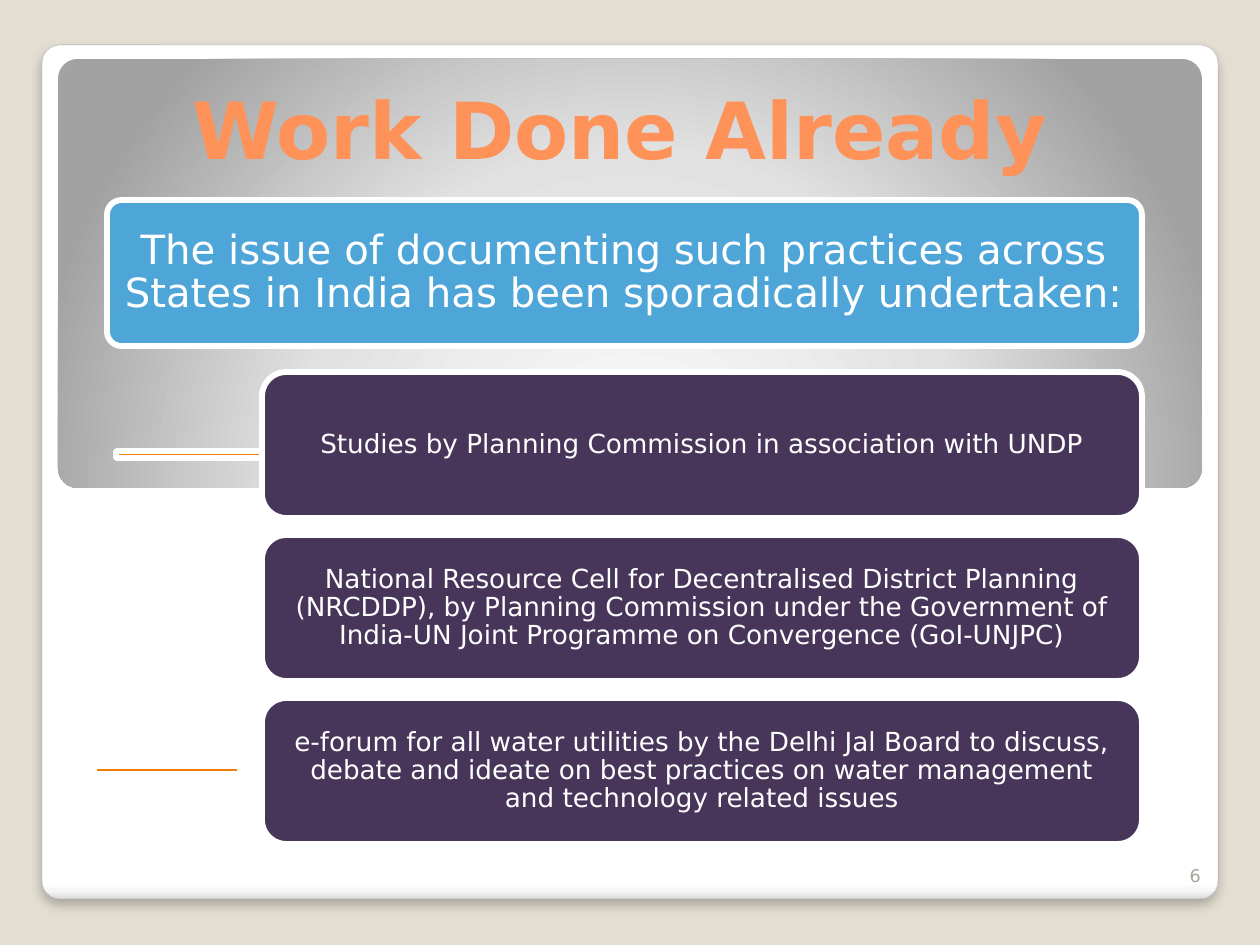
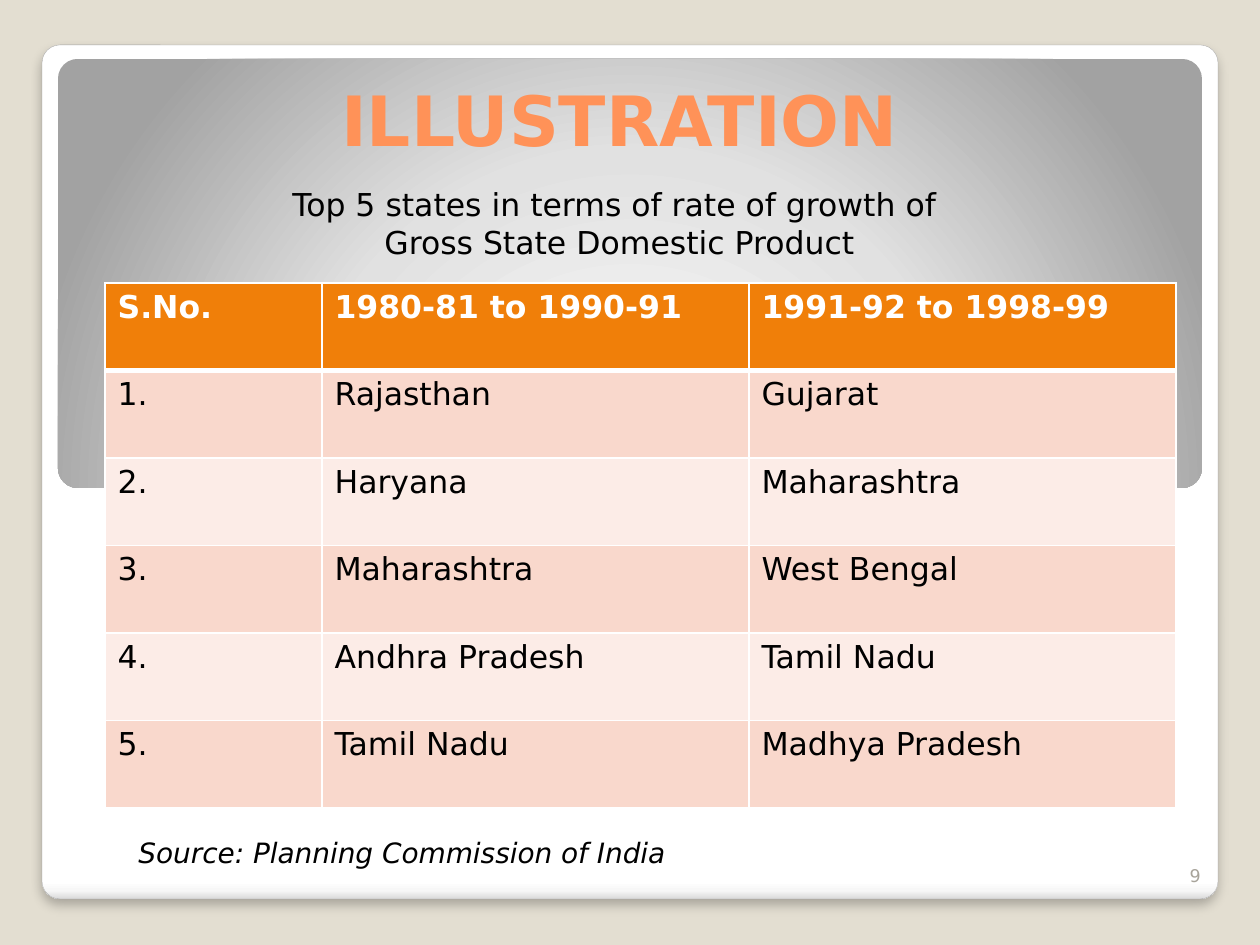
from pptx import Presentation
from pptx.dml.color import RGBColor
from pptx.enum.shapes import MSO_SHAPE as Shape
from pptx.enum.text import MSO_ANCHOR as Anchor, PP_ALIGN as Align
from pptx.oxml import parse_xml
from pptx.oxml.ns import nsdecls, qn
from pptx.util import Emu, Pt

FONT = "DejaVu Sans"
SAND, WHITE, BLACK, NUMBER_GREY = "E3DED1", "FFFFFF", "000000", "A8A49B"
CORAL, ORANGE, BLUE, PURPLE = "FF9258", "F07F09", "4EA5D8", "48365A"
BAND_COLORS = ("F9D8CC", "FCECE7")
CARD_STOPS = [(0, "FFFFFF"), (98, "FFFFFF"), (99, "F7F7F7"), (100, "DADADA")]
PANEL_STOPS = [(0, "FFFFFF"), (55, "E1E1E1"), (100, "A2A2A2")]
LINEAR = '<a:lin ang="5400000" scaled="0"/>'
RADIAL = ('<a:path path="circle"><a:fillToRect l="50000" t="175000" '
          'r="50000" b="-75000"/></a:path>')

WORK_HEADING = ("The issue of documenting such practices across States in India "
                "has been sporadically undertaken:")
WORK_ITEMS = [
    ("Studies by Planning Commission in association with UNDP", (116, 451, 146, 7)),
    ("National Resource Cell for Decentralised District Planning (NRCDDP), by "
     "Planning Commission under the Government of India-UN Joint Programme on "
     "Convergence (GoI-UNJPC)", (107, 604, 146, 6)),
    ("e-forum for all water utilities by the Delhi Jal Board to discuss, debate "
     "and ideate on best practices on water management and technology related "
     "issues", (94, 766, 146, 8)),
]
ITEM_LEFT, ITEM_TOP, ITEM_WIDTH, ITEM_HEIGHT, ITEM_STEP = 262, 372, 880, 146, 163

GROWTH_CAPTION = "Top 5 states in terms of rate of growth of \nGross State Domestic Product"
GROWTH_SOURCE = "Source: Planning Commission of India"
GROWTH_ROWS = [
    ("S.No.", "1980-81 to 1990-91", "1991-92 to 1998-99"),
    ("1.", "Rajasthan", "Gujarat"),
    ("2.", "Haryana", "Maharashtra"),
    ("3.", "Maharashtra", "West Bengal"),
    ("4.", "Andhra Pradesh", "Tamil Nadu"),
    ("5.", "Tamil Nadu", "Madhya Pradesh"),
]
COLUMN_WIDTHS = (217, 427, 427)


def px(length):
    return Emu(round(length * 914400 / 126))


def color(value):
    return RGBColor.from_string(value)


def write(frame, text, size=18, fill=BLACK, bold=False, italic=False,
          align=Align.LEFT, spacing=None):
    for index, line in enumerate(text.split("\n")):
        para = frame.add_paragraph() if index else frame.paragraphs[0]
        para.alignment = align
        para.line_spacing = spacing
        span = para.add_run()
        span.text = line
        span.font.name = FONT
        span.font.size = Pt(size)
        span.font.bold = bold
        span.font.italic = italic
        span.font.color.rgb = color(fill)


def set_frame(frame, anchor, inset=None):
    frame.word_wrap = True
    frame.vertical_anchor = anchor
    if inset is not None:
        frame.margin_left = frame.margin_right = px(inset)
        frame.margin_top = frame.margin_bottom = px(inset)


def add_text(page, area, text, anchor=Anchor.TOP, inset=None, **style):
    box = page.shapes.add_textbox(*map(px, area))
    set_frame(box.text_frame, anchor, inset)
    write(box.text_frame, text, **style)


def add_rounded(page, area, corner, fill, line=None, line_width=3.35):
    shape = page.shapes.add_shape(Shape.ROUNDED_RECTANGLE, *map(px, area))
    shape.adjustments[0] = corner
    shape.shadow.inherit = False
    shape.fill.solid()
    shape.fill.fore_color.rgb = color(fill)
    if line:
        shape.line.color.rgb = color(line)
        shape.line.width = Pt(line_width)
    else:
        shape.line.fill.background()
    return shape


def set_gradient(shape, stops, direction):
    marks = "".join(f'<a:gs pos="{place * 1000}"><a:srgbClr val="{value}"/></a:gs>'
                    for place, value in stops)
    gradient = parse_xml(f'<a:gradFill {nsdecls("a")} rotWithShape="1">'
                         f'<a:gsLst>{marks}</a:gsLst>{direction}</a:gradFill>')
    properties = shape._element.spPr
    properties.replace(properties.find(qn("a:solidFill")), gradient)


def add_shadow(shape):
    effects = shape._element.spPr.find(qn("a:effectLst"))
    effects.append(parse_xml(
        f'<a:outerShdw {nsdecls("a")} blurRad="{Pt(6)}" dist="{Pt(4)}" dir="5400000" '
        'algn="tl" rotWithShape="0"><a:srgbClr val="000000"><a:alpha val="25000"/>'
        '</a:srgbClr></a:outerShdw>'))


def add_page(deck, title, title_area, title_size, number):
    page = deck.slides.add_slide(deck.slide_layouts[6])
    page.background.fill.solid()
    page.background.fill.fore_color.rgb = color(SAND)
    card = add_rounded(page, (42, 45, 1176, 854), 0.021, WHITE, "A4A4A4", 0.16)
    set_gradient(card, CARD_STOPS, LINEAR)
    add_shadow(card)
    panel = add_rounded(page, (58, 59, 1144, 429), 0.046, WHITE)
    set_gradient(panel, PANEL_STOPS, RADIAL)
    add_text(page, title_area, title, Anchor.BOTTOM, 6, size=title_size,
             fill=CORAL, bold=True, align=Align.CENTER)
    add_text(page, (1150, 842, 63, 50), number, Anchor.BOTTOM, size=10,
             fill=NUMBER_GREY, align=Align.RIGHT)
    return page


def add_block(page, area, corner, fill, text, size, inset):
    block = add_rounded(page, area, corner, fill, WHITE)
    set_frame(block.text_frame, Anchor.MIDDLE, inset)
    write(block.text_frame, text, size=size, fill=WHITE, align=Align.CENTER, spacing=0.9)


def set_borders(cell, bottom_width):
    properties = cell._tc.get_or_add_tcPr()
    widths = {"lnL": 1, "lnR": 1, "lnT": 1, "lnB": bottom_width}
    for index, (side, width) in enumerate(widths.items()):
        properties.insert(index, parse_xml(
            f'<a:{side} {nsdecls("a")} w="{Pt(width)}"><a:solidFill>'
            f'<a:srgbClr val="{WHITE}"/></a:solidFill></a:{side}>'))


def add_growth_table(page):
    table = page.shapes.add_table(len(GROWTH_ROWS), len(COLUMN_WIDTHS),
                                  px(105), px(283), px(1071), px(525)).table
    for column, width in zip(table.columns, COLUMN_WIDTHS):
        column.width = px(width)
    for row, values in enumerate(GROWTH_ROWS):
        header = row == 0
        for column, value in enumerate(values):
            cell = table.cell(row, column)
            cell.fill.solid()
            cell.fill.fore_color.rgb = color(ORANGE if header else BAND_COLORS[(row - 1) % 2])
            write(cell.text_frame, value, fill=WHITE if header else BLACK, bold=header)
            set_borders(cell, 3 if header else 1)


def build_work_page(deck):
    page = add_page(deck, "Work Done Already", (84, 73, 1071, 108), 45, "6")
    add_block(page, (107, 200, 1035, 146), 0.1, BLUE, WORK_HEADING, 23, 6)
    for index, (text, tab_area) in enumerate(WORK_ITEMS):
        add_rounded(page, tab_area, 0.167, ORANGE, WHITE)
        area = (ITEM_LEFT, ITEM_TOP + index * ITEM_STEP, ITEM_WIDTH, ITEM_HEIGHT)
        add_block(page, area, 0.167, PURPLE, text, 15, 15)


def build_growth_page(deck):
    page = add_page(deck, "ILLUSTRATION", (84, 63, 1071, 103), 39.6, "9")
    add_growth_table(page)
    add_text(page, (126, 829, 599, 47), GROWTH_SOURCE, size=16, italic=True)
    add_text(page, (105, 179, 1029, 89), GROWTH_CAPTION, align=Align.CENTER)


def main():
    deck = Presentation()
    deck.slide_width, deck.slide_height = px(1260), px(945)
    build_work_page(deck)
    build_growth_page(deck)
    deck.save("out.pptx")


if __name__ == "__main__":
    main()
